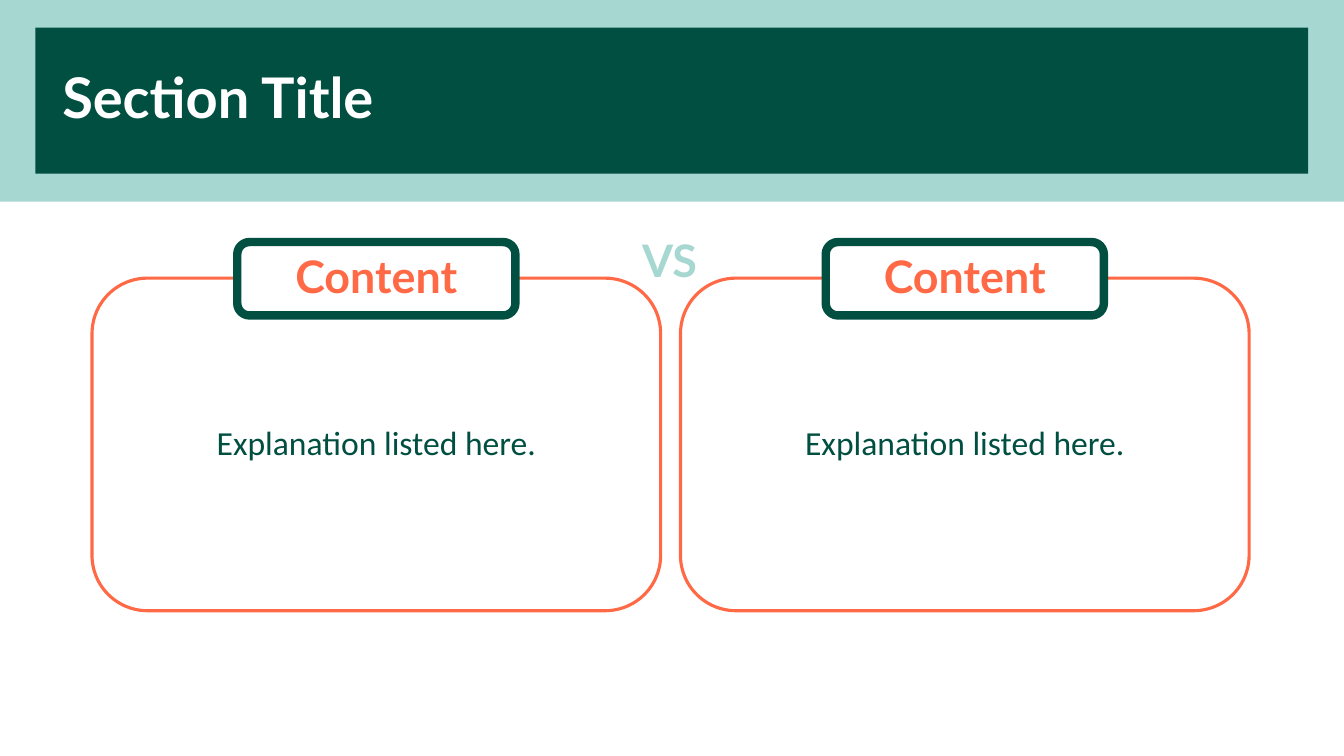
"""Build a comparison slide with a title band and two labelled panels."""
from dataclasses import dataclass

from pptx import Presentation
from pptx.dml.color import RGBColor
from pptx.enum.shapes import MSO_SHAPE
from pptx.enum.text import MSO_ANCHOR, PP_ALIGN
from pptx.util import Cm, Pt

RECTANGLE = MSO_SHAPE.RECTANGLE
ROUNDED = MSO_SHAPE.ROUNDED_RECTANGLE
MIDDLE, TOP = MSO_ANCHOR.MIDDLE, MSO_ANCHOR.TOP
CENTER, LEFT = PP_ALIGN.CENTER, PP_ALIGN.LEFT

MINT, GREEN, ORANGE, WHITE = "A6D7D1", "014F41", "FF6946", "FFFFFF"
SLIDE_WIDTH, SLIDE_HEIGHT = 33.87, 19.05
PANEL_WIDTH, LABEL_WIDTH = 14.33, 7.01


@dataclass(frozen=True)
class Box:
    left: float
    top: float
    width: float
    height: float


@dataclass(frozen=True)
class Panel:
    left: float
    heading: str
    explanation: str


PANELS = [
    Panel(17.15, "Content", "Explanation listed here."),
    Panel(2.32, "Content", "Explanation listed here."),
]


def color(value: str) -> RGBColor:
    """Turn a hex string into a colour."""
    return RGBColor.from_string(value)


def lengths(box: Box) -> tuple[Cm, Cm, Cm, Cm]:
    """Give the box sides as lengths."""
    return Cm(box.left), Cm(box.top), Cm(box.width), Cm(box.height)


def write(frame, text: str, *, size: float, ink: str, font: str = "Lato",
          bold: bool = True, align: PP_ALIGN = CENTER,
          anchor: MSO_ANCHOR = MIDDLE, wrap: bool = True,
          spacing: float = 0.9, before: float = 0) -> None:
    """Put one formatted paragraph into a text frame."""
    frame.word_wrap = wrap
    frame.vertical_anchor = anchor
    paragraph = frame.paragraphs[0]
    paragraph.alignment = align
    paragraph.line_spacing = spacing
    paragraph.space_before = Pt(before)
    run = paragraph.add_run()
    run.text = text
    run.font.name = font
    run.font.size = Pt(size)
    run.font.bold = bold
    run.font.color.rgb = color(ink)


def add_block(slide, kind: MSO_SHAPE, box: Box, fill: str,
              line: str = "", weight: float = 0):
    """Add a filled shape with an optional outline."""
    block = slide.shapes.add_shape(kind, *lengths(box))
    block.shadow.inherit = False
    block.fill.solid()
    block.fill.fore_color.rgb = color(fill)
    if line:
        block.line.color.rgb = color(line)
        block.line.width = Pt(weight)
    else:
        block.line.fill.background()
    return block


def add_text(slide, box: Box, text: str, **style) -> None:
    """Add a text box with one formatted paragraph."""
    write(slide.shapes.add_textbox(*lengths(box)).text_frame, text, **style)


def add_panel(slide, panel: Panel) -> None:
    """Draw a panel with its heading label."""
    body = add_block(slide, ROUNDED, Box(panel.left, 7.01, PANEL_WIDTH, 8.38),
                     WHITE, ORANGE, 2.25)
    write(body.text_frame, panel.explanation, size=24, ink=GREEN,
          font="Calibri", bold=False, before=10)
    label_left = panel.left + (PANEL_WIDTH - LABEL_WIDTH) / 2
    add_block(slide, ROUNDED, Box(label_left, 6.1, LABEL_WIDTH, 1.85),
              WHITE, GREEN, 6)
    add_text(slide, Box(panel.left, 6.1, PANEL_WIDTH, 1.85), panel.heading,
             size=32, ink=ORANGE, before=10)


def main() -> None:
    """Build and save the slide."""
    deck = Presentation()
    deck.slide_width, deck.slide_height = Cm(SLIDE_WIDTH), Cm(SLIDE_HEIGHT)
    slide = deck.slides.add_slide(deck.slide_layouts[6])
    add_block(slide, RECTANGLE, Box(0, 0, SLIDE_WIDTH, 5.08), MINT)
    add_block(slide, RECTANGLE, Box(0.89, 0.7, 32.08, 3.68), GREEN)
    for panel in PANELS:
        add_panel(slide, panel)
    add_text(slide, Box(1.32, 0.7, 31.65, 3.68), "Section Title",
             size=40, ink=WHITE, align=LEFT)
    add_text(slide, Box(15.93, 5.74, 1.93, 1.63), "VS", size=32, ink=MINT,
             align=LEFT, anchor=TOP, wrap=False, spacing=1)
    deck.save("out.pptx")


if __name__ == "__main__":
    main()
